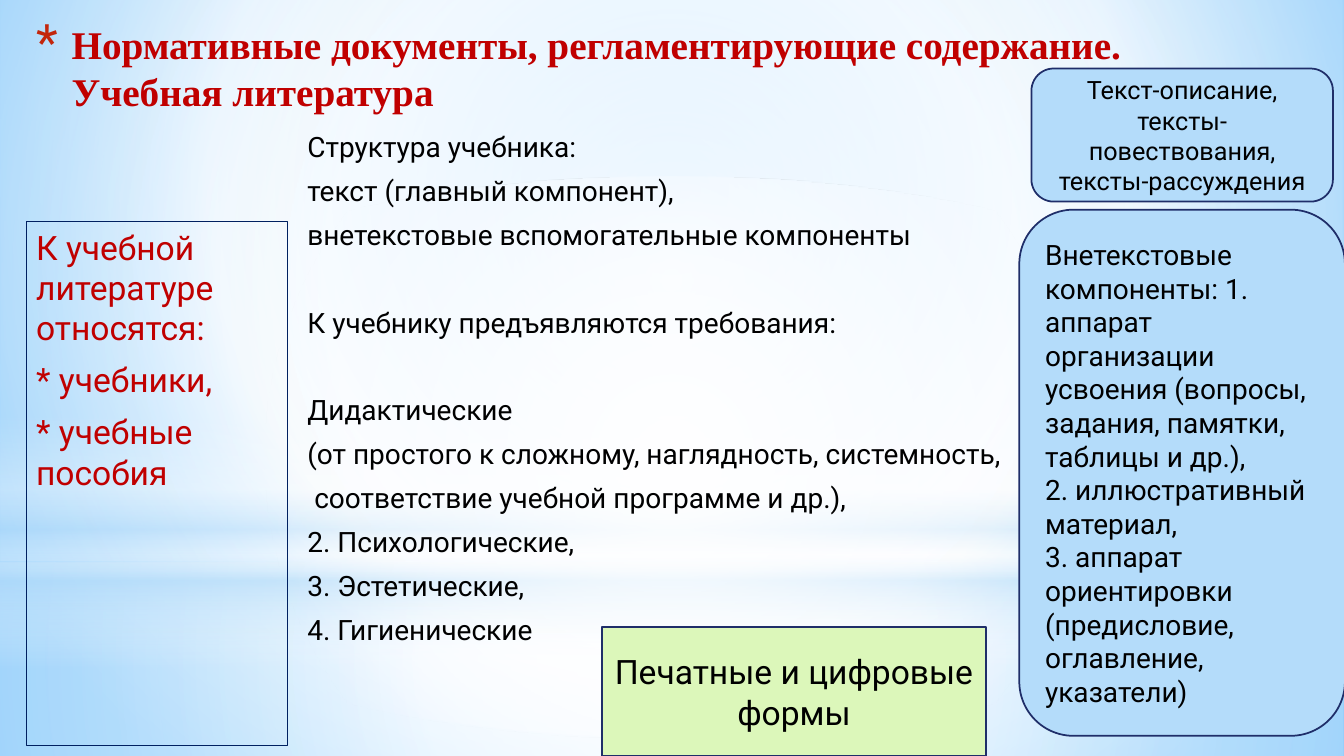
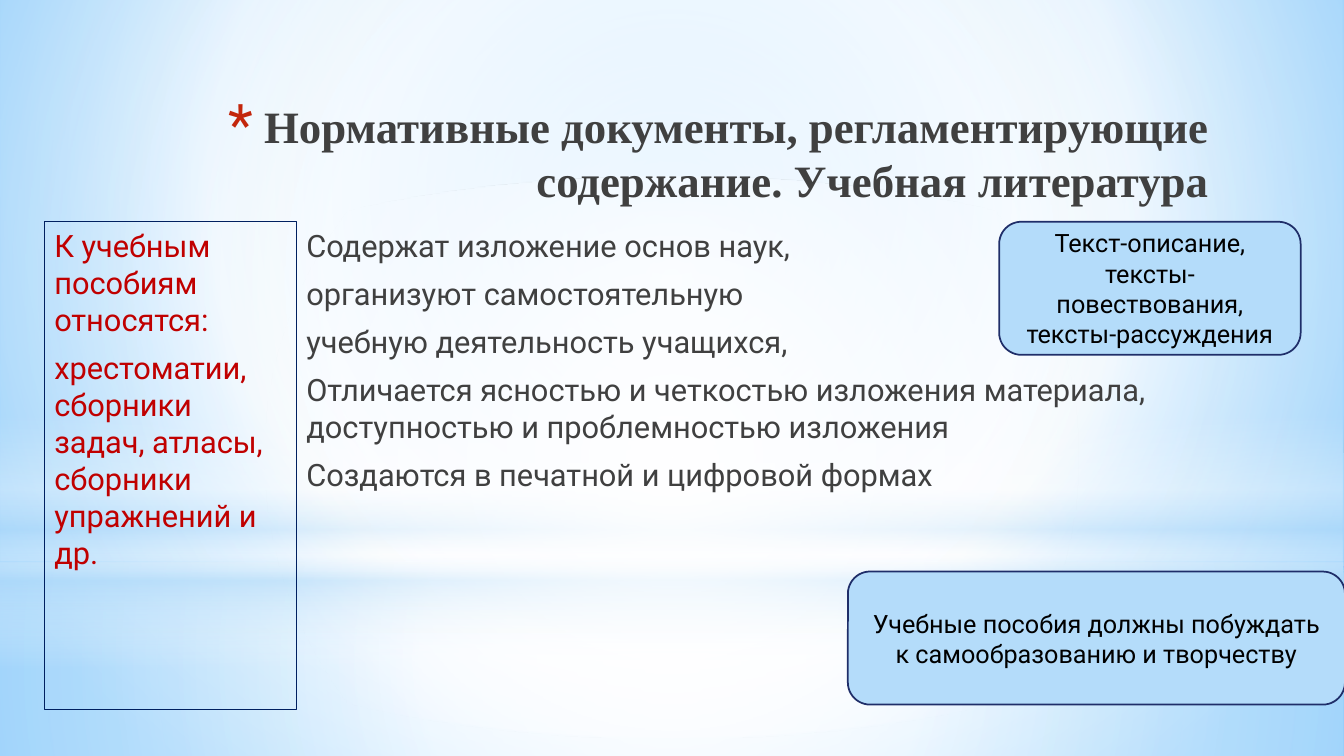
import pptx
import pptx.util
import pptx.dml.color
import pptx.enum.shapes
import pptx.enum.text
import pptx.oxml
import pptx.oxml.ns
import lxml.etree

Inches = pptx.util.Inches
Pt = pptx.util.Pt
SHAPE = pptx.enum.shapes.MSO_SHAPE
ALIGN = pptx.enum.text.PP_ALIGN
ANCHOR = pptx.enum.text.MSO_ANCHOR
qn = pptx.oxml.ns.qn

RED, BLACK, GREY = "C00000", "000000", "404040"
SKY, LIME, NAVY, FRAME = "B4DCFA", "DCF7BA", "1F2E69", "002060"
WHITE, BULLET = "FFFFFF", "C3260C"
TITLE = "Нормативные документы, регламентирующие содержание. Учебная литература"
TEXT_KINDS = "Текст-описание, тексты-повествования, тексты-рассуждения"


def rgb(code):
    return pptx.dml.color.RGBColor.from_string(code)


def write(frame, *lines, size, color=BLACK, font="Roboto", bold=False, align=ALIGN.LEFT,
          anchor=ANCHOR.TOP, before=0, after=0, section_starts=()):
    """Fill a text frame; the lines numbered in section_starts get a line's gap above."""
    frame.word_wrap = True
    frame.vertical_anchor = anchor
    for number, line in enumerate(lines):
        paragraph = frame.paragraphs[0] if number == 0 else frame.add_paragraph()
        paragraph.alignment = align
        gap = size * 1.55 if number in section_starts else 0
        paragraph.space_before = Pt(before + gap)
        paragraph.space_after = Pt(after)
        run = paragraph.add_run()
        run.text = line
        run.font.name = font
        run.font.size = Pt(size)
        run.font.bold = bold
        run.font.color.rgb = rgb(color)


prs = pptx.Presentation()
prs.slide_width = Inches(13.33)
prs.slide_height = Inches(7.5)
title_only = prs.slide_layouts[5]
master = prs.slide_master
textbook = prs.slides.add_slide(title_only)
study_aids = prs.slides.add_slide(title_only)

# Shared backdrop: stops are position, colour, opacity; focus is left, top, right, bottom
CENTRE = (50, 50, 50, 50)
backdrop = [
    (None, None, [(0, "9ED5FF", 100), (60, WHITE, 100), (100, "5BB9FF", 100)], (20, 10, 20, 60)),
    (SHAPE.RECTANGLE, (0, 5.58, 13.33, 1.92),
     [(0, WHITE, 91), (37, WHITE, 76), (100, SKY, 79)], CENTRE),
    (SHAPE.RECTANGLE, (0, 0, 13.33, 5.58),
     [(0, WHITE, 89), (48, WHITE, 62), (100, SKY, 79)], CENTRE),
    (SHAPE.RECTANGLE, (0, 4.12, 13.33, 2.5),
     [(0, WHITE, 0), (29, WHITE, 30), (45, SKY, 40), (55, WHITE, 26), (65, SKY, 60),
      (100, WHITE, 0)], None),
    (SHAPE.OVAL, (0, 1.75, 13.33, 5.58), [(0, WHITE, 100), (56, WHITE, 0)], CENTRE),
]
for layer, (outline, box, stops, focus) in enumerate(backdrop):
    if outline is None:
        master.background.fill.gradient()
        painted = master.element
    else:
        glow = textbook.shapes.add_shape(outline, *map(Inches, box))
        glow.shadow.inherit = False
        glow.line.fill.background()
        glow.fill.gradient()
        painted = glow.element
        painted.nvSpPr.cNvPr.set("id", str(100 + layer))
        master.shapes.element.insert(1 + layer, painted)
    gradient = next(painted.iter(qn("a:gradFill")))
    for part in list(gradient):
        gradient.remove(part)
    stop_list = lxml.etree.SubElement(gradient, qn("a:gsLst"))
    for position, color, opacity in stops:
        stop = lxml.etree.SubElement(stop_list, qn("a:gs"), pos=str(position * 1000))
        tint = lxml.etree.SubElement(stop, qn("a:srgbClr"), val=color)
        lxml.etree.SubElement(tint, qn("a:alpha"), val=str(opacity * 1000))
    if focus:
        spread = lxml.etree.SubElement(gradient, qn("a:path"), path="circle")
        sides = {side: str(share * 1000) for side, share in zip("ltrb", focus)}
        lxml.etree.SubElement(spread, qn("a:fillToRect"), **sides)
    else:
        lxml.etree.SubElement(gradient, qn("a:lin"), ang="5400000", scaled="0")

# Titles with a hanging asterisk
for slide, left, top, size, color, align in [
    (textbook, 0.26, 0.1, 28, RED, ALIGN.LEFT),
    (study_aids, 0.6, 0.88, 32, GREY, ALIGN.RIGHT),
]:
    heading = slide.shapes.title
    heading.left, heading.top = Inches(left), Inches(top)
    heading.width, heading.height = Inches(11.49), Inches(1.16)
    heading.text_frame.margin_top = Inches(0.1)
    write(heading.text_frame, TITLE, size=size, color=color, font="Times New Roman",
          bold=True, align=align)
    properties = heading.text_frame.paragraphs[0]._p.get_or_add_pPr()
    properties.set("marL", str(Inches(0.35)))
    properties.set("indent", str(-Inches(0.35)))
    bullet_color = lxml.etree.SubElement(properties, qn("a:buClr"))
    lxml.etree.SubElement(bullet_color, qn("a:srgbClr"), val=BULLET)
    lxml.etree.SubElement(properties, qn("a:buSzPct"), val="128000")
    lxml.etree.SubElement(properties, qn("a:buFont"), typeface="Roboto")
    lxml.etree.SubElement(properties, qn("a:buChar"), char="*")

# Framed list on the left and open text in the middle
for slide, box, framed, size, color, section_starts, lines in [
    (textbook, (0.26, 2.2, 2.59, 5.2), True, 24, RED, (),
     ["К учебной литературе относятся:", "* учебники,", "* учебные пособия"]),
    (textbook, (2.95, 1.24, 9.66, 5.1), False, 20, BLACK, (3, 4),
     ["Структура учебника:",
      "текст (главный компонент),",
      "внетекстовые вспомогательные компоненты",
      "К учебнику предъявляются требования:",
      "Дидактические",
      "(от простого к сложному, наглядность, системность,",
      " соответствие учебной программе и др.),",
      "2. Психологические,",
      "3. Эстетические,",
      "4. Гигиенические"]),
    (study_aids, (0.44, 2.2, 2.5, 4.84), True, 22, RED, (),
     ["К учебным пособиям относятся:",
      "хрестоматии, сборники задач, атласы, сборники упражнений и др."]),
    (study_aids, (2.94, 2.2, 9.66, 3.76), False, 22, GREY, (),
     ["Содержат изложение основ наук,",
      "организуют самостоятельную",
      "учебную деятельность учащихся,",
      "Отличается ясностью и четкостью изложения материала, "
      "доступностью и проблемностью изложения",
      "Создаются в печатной и цифровой формах"]),
]:
    passage = slide.shapes.add_textbox(*map(Inches, box))
    if framed:
        passage.line.color.rgb = rgb(FRAME)
        passage.line.width = Pt(0.75)
    write(passage.text_frame, *lines, size=size, color=color, before=size * 0.22, after=3,
          section_starts=section_starts)

# Filled cards
for slide, box, outline, fill, size, align, lines in [
    (textbook, (10.23, 0.68, 2.99, 1.32), SHAPE.ROUNDED_RECTANGLE, SKY, 18, ALIGN.CENTER,
     [TEXT_KINDS]),
    (textbook, (10.11, 2.08, 3.23, 5.22), SHAPE.ROUNDED_RECTANGLE, SKY, 20, ALIGN.LEFT,
     ["Внетекстовые компоненты: 1. аппарат организации усвоения "
      "(вопросы, задания, памятки, таблицы и др.),",
      "2. иллюстративный материал,",
      "3. аппарат ориентировки (предисловие, оглавление, указатели)"]),
    (textbook, (5.97, 6.22, 3.81, 1.28), SHAPE.RECTANGLE, LIME, 24, ALIGN.CENTER,
     ["Печатные и цифровые формы"]),
    (study_aids, (9.91, 2.2, 2.99, 1.32), SHAPE.ROUNDED_RECTANGLE, SKY, 18, ALIGN.CENTER,
     [TEXT_KINDS]),
    (study_aids, (8.41, 5.67, 4.93, 1.32), SHAPE.ROUNDED_RECTANGLE, SKY, 18, ALIGN.CENTER,
     ["Учебные пособия должны побуждать к самообразованию и творчеству"]),
]:
    card = slide.shapes.add_shape(outline, *map(Inches, box))
    card.shadow.inherit = False
    card.fill.solid()
    card.fill.fore_color.rgb = rgb(fill)
    card.line.color.rgb = rgb(NAVY)
    card.line.width = Pt(1.25)
    write(card.text_frame, *lines, size=size, align=align, anchor=ANCHOR.MIDDLE)

prs.save("out.pptx")
